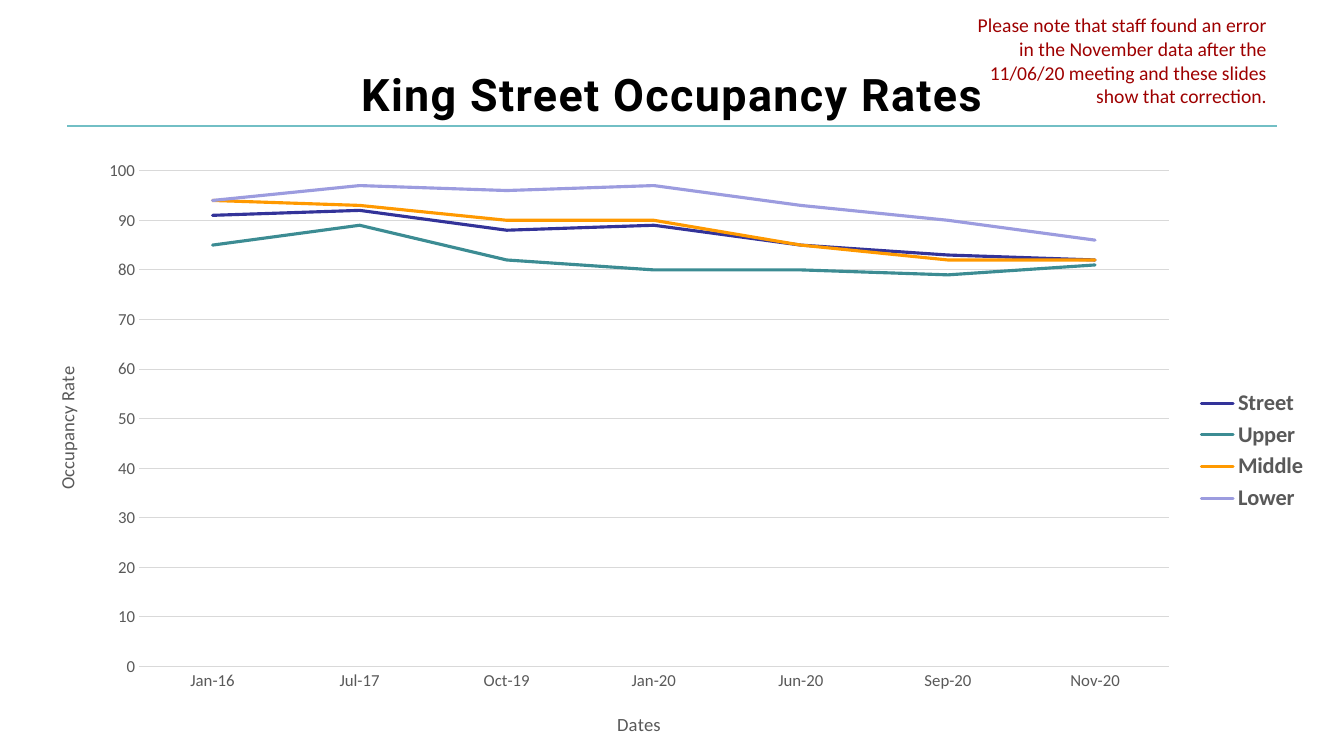
from dataclasses import dataclass

from lxml import etree
from pptx import Presentation
from pptx import util as u
from pptx.chart.data import CategoryChartData
from pptx.dml.color import RGBColor
from pptx.enum import chart as charts, shapes, text
from pptx.oxml.ns import qn


@dataclass(frozen=True)
class Theme:
    heading_font: str = "Roboto"
    body_font: str = "Calibri"
    black: str = "000000"
    gray: str = "595959"
    grid: str = "D9D9D9"
    rule: str = "72BFC5"
    note: str = "9E0000"
    title_size: float = 32
    note_size: float = 14
    axis_size: float = 12
    axis_title_size: float = 13.3
    legend_size: float = 16


DATES = ["Jan-16", "Jul-17", "Oct-19", "Jan-20", "Jun-20", "Sep-20", "Nov-20"]
OCCUPANCY = {
    "Street": ("333399", [91, 92, 88, 89, 85, 83, 82]),
    "Upper": ("3C8C93", [85, 89, 82, 80, 80, 79, 81]),
    "Middle": ("FF9900", [94, 93, 90, 90, 85, 82, 82]),
    "Lower": ("9C9CDF", [94, 97, 96, 97, 93, 90, 86]),
}


class SlideBuilder:
    def __init__(self, slide, theme):
        self.slide = slide
        self.theme = theme

    def style_font(self, font, size, color, name=None, bold=False):
        font.name = name or self.theme.body_font
        font.size = u.Pt(size)
        font.bold = bold
        font.color.rgb = RGBColor.from_string(color)

    def style_line(self, line, color, width):
        line.color.rgb = RGBColor.from_string(color)
        line.width = u.Pt(width)

    def rule(self, left, top, right):
        connector = self.slide.shapes.add_connector(
            shapes.MSO_CONNECTOR.STRAIGHT, u.Pt(left), u.Pt(top), u.Pt(right), u.Pt(top))
        self.style_line(connector.line, self.theme.rule, 1)
        etree.SubElement(connector._element.spPr, qn("a:effectLst"))

    def text_box(self, box, content, align, anchor, size, color,
                 name=None, bold=False, spacing=0):
        shape = self.slide.shapes.add_textbox(*map(u.Pt, box))
        frame = shape.text_frame
        frame.word_wrap = True
        frame.vertical_anchor = anchor
        paragraph = frame.paragraphs[0]
        paragraph.alignment = align
        run = paragraph.add_run()
        run.text = content
        self.style_font(run.font, size, color, name, bold)
        if spacing:
            run._r.get_or_add_rPr().set("spc", str(spacing * 100))

    def place(self, element, index, **fractions):
        """Set a manual layout, in fractions of the chart."""
        for old in element.findall(qn("c:layout")):
            element.remove(old)
        layout = etree.Element(qn("c:layout"))
        manual = etree.SubElement(layout, qn("c:manualLayout"))
        if "w" in fractions:
            etree.SubElement(manual, qn("c:layoutTarget")).set("val", "inner")
        for side in "xy":
            etree.SubElement(manual, qn(f"c:{side}Mode")).set("val", "edge")
        for key, value in fractions.items():
            etree.SubElement(manual, qn(f"c:{key}")).set("val", str(value))
        element.insert(index, layout)

    def axis(self, axis, title, x, y, rotation):
        self.style_font(axis.tick_labels.font, self.theme.axis_size, self.theme.gray)
        axis.major_tick_mark = charts.XL_TICK_MARK.NONE
        axis.minor_tick_mark = charts.XL_TICK_MARK.NONE
        frame = axis.axis_title.text_frame
        run = frame.paragraphs[0].add_run()
        run.text = title
        self.style_font(run.font, self.theme.axis_title_size, self.theme.gray)
        element = axis.axis_title._element
        body = next(element.iter(qn("a:bodyPr")))
        body.set("rot", str(rotation * 60000))
        body.set("vert", "horz")
        self.place(element, 1, x=x, y=y)

    def line_chart(self, box, categories, series_table):
        data = CategoryChartData()
        data.categories = categories
        for name, (_, values) in series_table.items():
            data.add_series(name, values)
        chart = self.slide.shapes.add_chart(
            charts.XL_CHART_TYPE.LINE, *map(u.Pt, box), data).chart
        self.style_font(chart.font, 10, self.theme.black)
        chart.has_title = False
        chart.plots[0].vary_by_categories = False
        self.place(chart._chartSpace.chart.plotArea, 0, x=0.088, y=0.037, w=0.796, h=0.82)

        # Series
        for series, (color, _) in zip(chart.plots[0].series, series_table.values()):
            series.smooth = False
            series.marker.style = charts.XL_MARKER_STYLE.NONE
            self.style_line(series.format.line, color, 2.25)
            series.format.line._ln.set("cap", "rnd")

        # Axes
        self.axis(chart.category_axis, "Dates", 0.455, 0.925, 0)
        self.style_line(chart.category_axis.format.line, self.theme.grid, 0.75)
        rates = chart.value_axis
        self.axis(rates, "Occupancy Rate", 0.02, 0.355, -90)
        rates.minimum_scale, rates.maximum_scale, rates.major_unit = 0, 100, 10
        rates.format.line.fill.background()
        rates.has_major_gridlines = True
        self.style_line(rates.major_gridlines.format.line, self.theme.grid, 0.75)

        # Legend
        chart.has_legend = True
        chart.legend.position = charts.XL_LEGEND_POSITION.RIGHT
        chart.legend.include_in_layout = False
        self.style_font(chart.legend.font, self.theme.legend_size, self.theme.gray, bold=True)


def main():
    presentation = Presentation()
    presentation.slide_width = u.Pt(960)
    presentation.slide_height = u.Pt(540)
    slide = presentation.slides.add_slide(presentation.slide_layouts[6])
    theme = Theme()
    builder = SlideBuilder(slide, theme)

    # Heading
    builder.rule(48, 90, 912)
    builder.text_box((48, 21.6, 864, 90), "King Street Occupancy Rates",
                     text.PP_ALIGN.CENTER, text.MSO_ANCHOR.MIDDLE, theme.title_size,
                     theme.black, theme.heading_font, bold=True, spacing=1)

    # Occupancy chart
    builder.line_chart((18, 106, 924, 432), DATES, OCCUPANCY)

    # Correction note
    builder.text_box((690, 6, 222, 75),
                     "Please note that staff found an error in the November data after "
                     "the 11/06/20 meeting and these slides show that correction.",
                     text.PP_ALIGN.RIGHT, text.MSO_ANCHOR.TOP, theme.note_size, theme.note)

    presentation.save("out.pptx")


if __name__ == "__main__":
    main()
